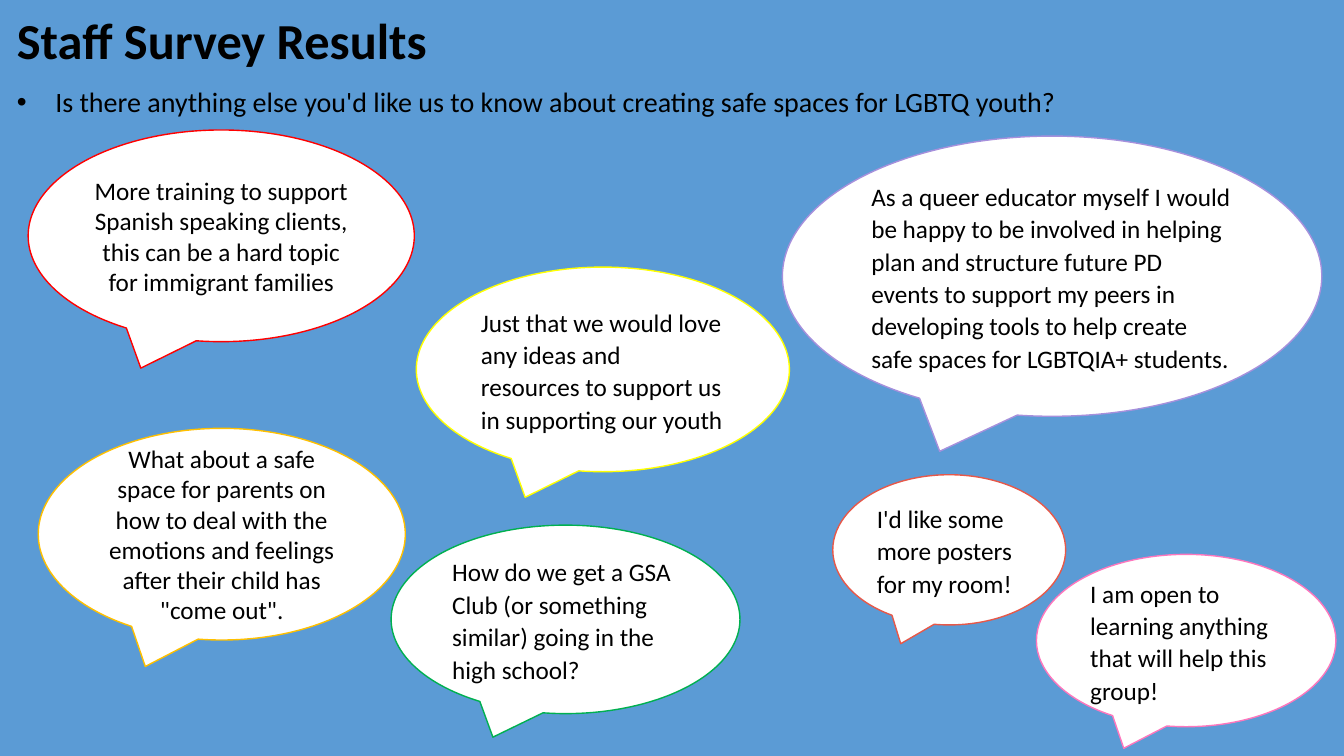
import pptx
import pptx.dml.color
import pptx.enum.shapes
import pptx.enum.text
import pptx.oxml
import pptx.oxml.ns
import pptx.util

Inches = pptx.util.Inches
Pt = pptx.util.Pt
ALIGN = pptx.enum.text.PP_ALIGN
ANCHOR = pptx.enum.text.MSO_ANCHOR

BLUE, WHITE, BLACK = "5B9BD5", "FFFFFF", "000000"

# box, outline, centred, words
QUOTES = [
    ((7.76, 1.35, 5.35, 2.78), "A690DC", False,
     "As a queer educator myself I would be happy to be involved in helping "
     "plan and structure future PD events to support my peers in developing "
     "tools to help create safe spaces for LGBTQIA+ students."),
    ((3.88, 5.21, 3.46, 1.87), "00B050", False,
     "How do we get a GSA Club (or something similar) going in the high school?"),
    ((8.26, 4.71, 2.31, 1.49), "E75849", False,
     "I'd like some more posters for my room!"),
    ((0.38, 4.25, 3.64, 2.1), "FFC000", True,
     "What about a safe space for parents on how to deal with the emotions "
     "and feelings after their child has \"come out\"."),
    ((4.13, 2.65, 3.7, 2.03), "FFFF00", False,
     "Just that we would love any ideas and resources to support us in "
     "supporting our youth"),
    ((0.28, 1.29, 3.83, 2.1), "FF0000", True,
     "More training to support Spanish speaking clients, this can be a hard "
     "topic for immigrant families"),
    ((10.28, 5.5, 2.97, 1.71), "FD77BD", False,
     "I am open to learning anything that will help this group!"),
]


def color(code):
    return pptx.dml.color.RGBColor.from_string(code)


def write(shape, words, size, bold=False):
    """Put one paragraph into the shape and return it."""
    frame = shape.text_frame
    frame.word_wrap = True
    frame.text = words
    para = frame.paragraphs[0]
    font = para.runs[0].font
    font.name, font.size, font.bold = "Calibri", Pt(size), bold
    font.color.rgb = color(BLACK)
    return para


def loosen(para):
    para.line_spacing = 1.07
    para.space_after = Pt(8)


def add_title(slide, box):
    shape = slide.shapes.add_textbox(*map(Inches, box))
    write(shape, "Staff Survey Results", 36, True)


def add_question(slide, box):
    shape = slide.shapes.add_textbox(*map(Inches, box))
    para = write(shape, "Is there anything else you'd like us to know about "
                 "creating safe spaces for LGBTQ youth?", 20)
    loosen(para)
    props = para._p.get_or_add_pPr()
    props.set("marL", str(Inches(0.38)))
    props.set("indent", str(Inches(-0.38)))
    space = pptx.oxml.ns.nsdecls("a")
    for tag in ('buFont %s typeface="Arial"', 'buChar %s char="•"'):
        props.append(pptx.oxml.parse_xml(f"<a:{tag % space}/>"))


def add_quote(slide, box, edge, centred, words):
    kind = pptx.enum.shapes.MSO_SHAPE.OVAL_CALLOUT
    shape = slide.shapes.add_shape(kind, *map(Inches, box))
    shape.shadow.inherit = False
    shape.fill.solid()
    shape.fill.fore_color.rgb = color(WHITE)
    shape.line.color.rgb = color(edge)
    shape.line.width = Pt(1)
    para = write(shape, words, 18)
    shape.text_frame.vertical_anchor = ANCHOR.MIDDLE
    para.alignment = ALIGN.CENTER if centred else ALIGN.LEFT
    if not centred:
        loosen(para)


def main():
    deck = pptx.Presentation()
    deck.slide_width, deck.slide_height = Inches(13.33), Inches(7.5)
    slide = deck.slides.add_slide(deck.slide_layouts[6])
    slide.background.fill.solid()
    slide.background.fill.fore_color.rgb = color(BLUE)
    add_title(slide, (0.07, 0.04, 13.07, 0.71))
    add_question(slide, (0.07, 0.77, 13.26, 0.5))
    for quote in QUOTES:
        add_quote(slide, *quote)
    deck.save("out.pptx")


if __name__ == "__main__":
    main()
